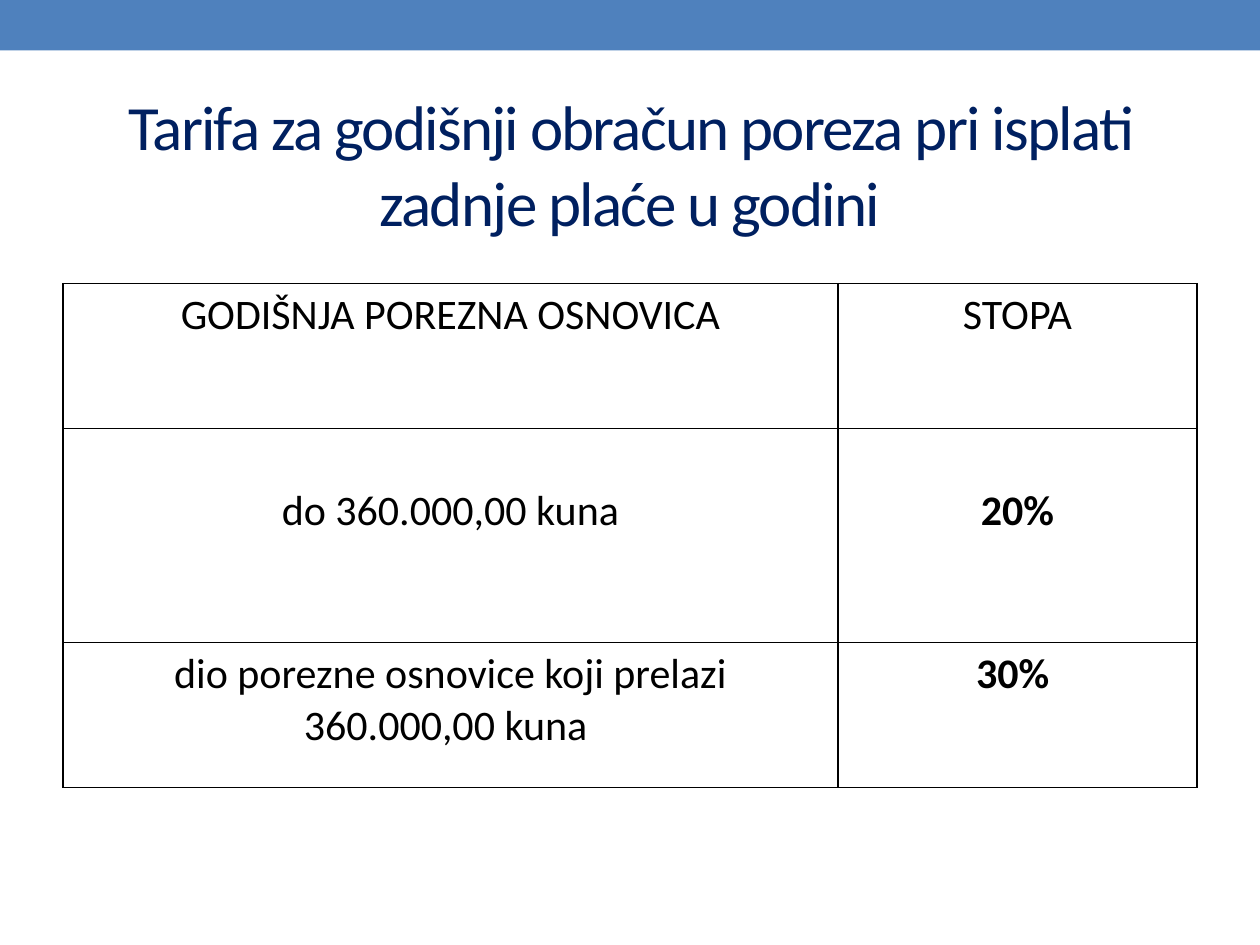
import pptx
import pptx.dml.color
import pptx.enum.shapes
import pptx.enum.text
import pptx.oxml.ns
import pptx.util
from dataclasses import dataclass
from lxml import etree

Pt = pptx.util.Pt
FONT = "Calibri"
BLACK = "000000"
LINE_HEIGHT = 29.3  # one line of 24 pt text


@dataclass
class TariffRow:
    base: str
    rate: str
    height: float
    bold_rate: bool = True
    lines_above: int = 0


TARIFF = [
    TariffRow("GODIŠNJA POREZNA OSNOVICA", "STOPA", 82.8, bold_rate=False),
    TariffRow("do 360.000,00 kuna", "20%", 122.4, lines_above=1),
    TariffRow("dio porezne osnovice koji prelazi 360.000,00 kuna ", "30% ", 82.8),
]
COLUMN_WIDTHS = [442.8, 205.2]


def color(value: str) -> pptx.dml.color.RGBColor:
    return pptx.dml.color.RGBColor.from_string(value)


def format_paragraph(paragraph, size: float, value: str, bold: bool = False) -> None:
    paragraph.alignment = pptx.enum.text.PP_ALIGN.CENTER
    paragraph.font.name = FONT
    paragraph.font.size = Pt(size)
    paragraph.font.bold = bold
    paragraph.font.color.rgb = color(value)


def add_borders(cell, width: float, value: str) -> None:
    properties = cell._tc.get_or_add_tcPr()
    qn = pptx.oxml.ns.qn
    for index, side in enumerate(("lnL", "lnR", "lnT", "lnB")):
        border = etree.Element(qn(f"a:{side}"), w=str(Pt(width)))
        fill = etree.SubElement(border, qn("a:solidFill"))
        etree.SubElement(fill, qn("a:srgbClr"), val=value)
        properties.insert(index, border)


def fill_cell(cell, text: str, bold: bool, lines_above: int) -> None:
    cell.text = text
    cell.margin_top = Pt(3.6 + lines_above * LINE_HEIGHT)
    cell.fill.background()
    add_borders(cell, 1, BLACK)
    format_paragraph(cell.text_frame.paragraphs[0], 24, BLACK, bold)


def add_tariff_table(slide, rows: list[TariffRow]) -> None:
    table = slide.shapes.add_table(
        len(rows), len(COLUMN_WIDTHS), Pt(36), Pt(162),
        Pt(sum(COLUMN_WIDTHS)), Pt(sum(row.height for row in rows))).table
    table.first_row = False
    table.horz_banding = False
    for column, width in zip(table.columns, COLUMN_WIDTHS):
        column.width = Pt(width)
    for index, row in enumerate(rows):
        table.rows[index].height = Pt(row.height)
        fill_cell(table.cell(index, 0), row.base, False, row.lines_above)
        fill_cell(table.cell(index, 1), row.rate, row.bold_rate, row.lines_above)


def main() -> None:
    presentation = pptx.Presentation()
    presentation.slide_width, presentation.slide_height = Pt(720), Pt(540)
    slide = presentation.slides.add_slide(presentation.slide_layouts[5])

    # Top band
    band = slide.shapes.add_shape(
        pptx.enum.shapes.MSO_SHAPE.RECTANGLE, 0, 0, Pt(720), Pt(28.8))
    band.shadow.inherit = False
    band.fill.solid()
    band.fill.fore_color.rgb = color("4F81BD")
    band.line.fill.background()

    # Title
    title = slide.shapes.title
    title.left, title.top, title.width, title.height = Pt(36), Pt(45), Pt(648), Pt(96.5)
    title.text_frame.text = (
        "Tarifa za godišnji obračun poreza pri isplati zadnje plaće u godini")
    title.text_frame.word_wrap = True
    title.text_frame.auto_size = pptx.enum.text.MSO_AUTO_SIZE.NONE
    title.text_frame.vertical_anchor = pptx.enum.text.MSO_ANCHOR.MIDDLE
    heading = title.text_frame.paragraphs[0]
    format_paragraph(heading, 36, "002060")
    heading.runs[0].font._element.set("spc", "-100")

    # Tariff table
    add_tariff_table(slide, TARIFF)

    presentation.save("out.pptx")


if __name__ == "__main__":
    main()
